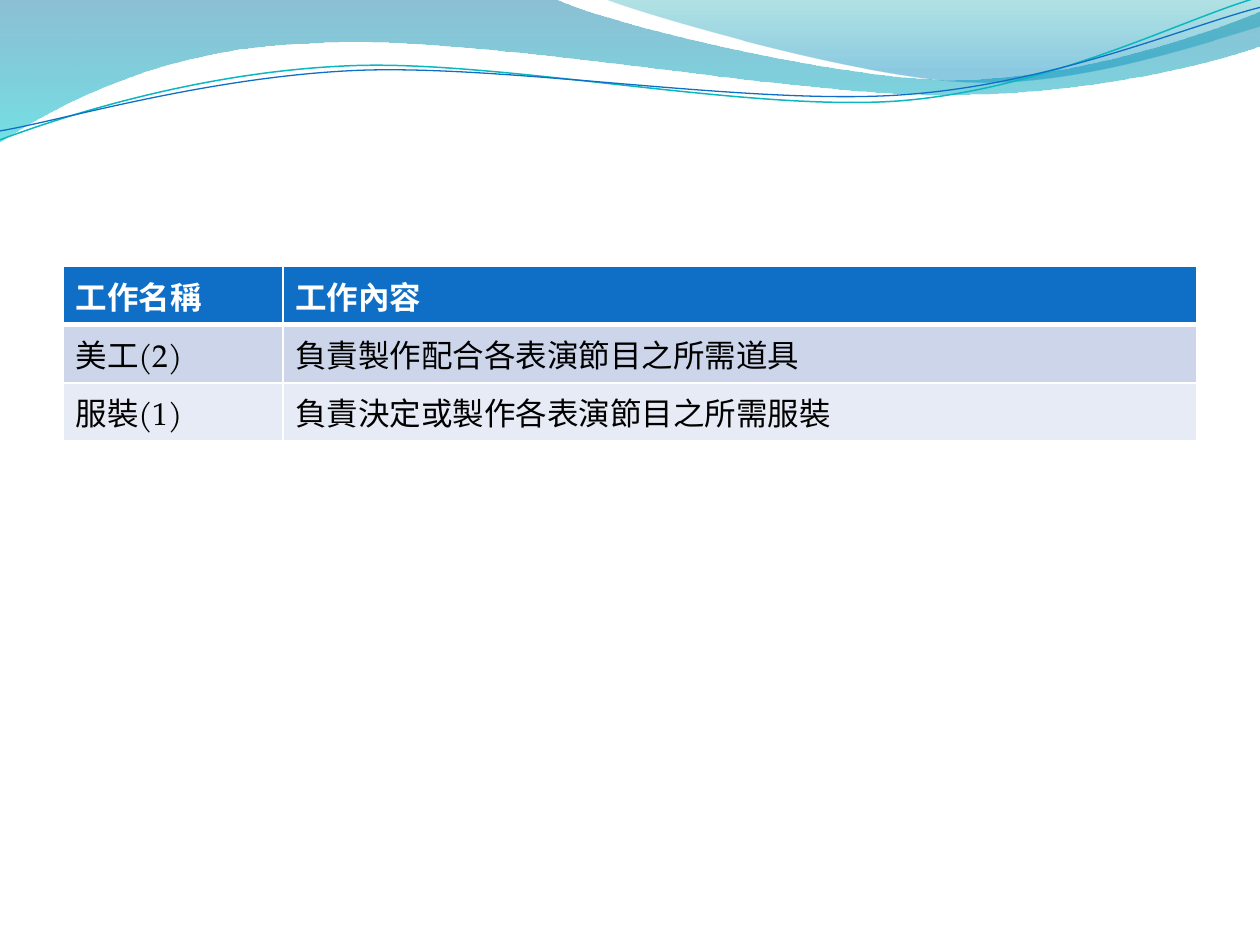
from lxml import etree
from pptx import Presentation
from pptx import util as u
from pptx.dml import color as dml
from pptx.oxml import ns

FONT = "TeX Gyre Pagella"
WHITE = "FFFFFF"
STRAND_ROTATION = 357.3

WAVES = [
    {"start": (0, 0),
     "segments": [
         [(11.18, -0.03)],
         [(12.09, 0.43), (16.87, 1.6), (19.25, 1.6)],
         [(21.67, 1.6), (24.33, 0.66), (25.4, 0.23)],
         [(25.43, 0.91)],
         [(24.97, 1.12), (22.1, 1.93), (18.95, 1.91)],
         [(15.8, 1.91), (9.7, 0.71), (6.53, 0.86)],
         [(3.28, 0.91), (1.17, 2.11), (-0.03, 2.87)]],
     "stops": [(0, "0074A1", 45), (1, "00C6CF", 55)]},
    {"start": (12.17, -0.03),
     "segments": [
         [(12.93, 0.28), (17.32, 1.57), (19.53, 1.65)],
         [(21.74, 1.75), (24.41, 0.81), (25.4, 0.53)],
         [(25.4, 0)]],
     "stops": [(0, "00A1A9", 30), (0.8, "008BBF", 45)]},
]
STRANDS = [
    {"start": (-0.05, 2.22),
     "segments": [
         [(1.19, 1.82), (4.02, 1.04), (7.05, 1.06)],
         [(10.05, 1.07), (15.02, 2.37), (18.08, 2.29)],
         [(21.13, 2.2), (23.87, 0.91), (25.41, 0.55)]],
     "line": ("0AB8BF", 0.85)},
    {"start": (-0.04, 2.04),
     "segments": [
         [(1.16, 1.9), (4.18, 1.15), (7.2, 1.16)],
         [(10.25, 1.18), (15.13, 2.25), (18.18, 2.17)],
         [(21.21, 2.1), (23.93, 1.06), (25.45, 0.75)]],
     "line": ("0F6FC6", 0.75)},
]
JOBS = [
    ("工作名稱", "工作內容"),
    ("美工(2)", "負責製作配合各表演節目之所需道具"),
    ("服裝(1)", "負責決定或製作各表演節目之所需服裝"),
]
ROW_FILLS = ["0F6FC6", "CCD5EA", "E7EBF5"]


def rgb(value):
    return dml.RGBColor.from_string(value)


def write_text(frame, content, size=18, color="000000", bold=False):
    run = frame.paragraphs[0].add_run()
    run.text = content
    run.font.name = FONT
    run.font.size = u.Pt(size)
    run.font.bold = bold
    run.font.color.rgb = rgb(color)


def bend_segments(shape, segments):
    steps = iter(list(shape.element.iter(ns.qn("a:lnTo"))))
    for segment in segments:
        first, *others = [next(steps) for _ in segment]
        if others:
            first.tag = ns.qn("a:cubicBezTo")
        for step in others:
            first.append(step[0])
            step.getparent().remove(step)


def add_outline(shapes, box, start, segments, closed):
    points = [(u.Cm(x), u.Cm(y)) for segment in segments for x, y in segment]
    builder = shapes.build_freeform(u.Cm(start[0]), u.Cm(start[1]))
    builder.add_line_segments(points, close=closed)
    shape = builder.convert_to_shape(u.Cm(box[0]), u.Cm(box[1]))
    bend_segments(shape, segments)
    shape.shadow.inherit = False
    return shape


def fill_gradient(shape, stops):
    shape.fill.gradient()
    shape.fill.gradient_angle = 270
    for stop, (position, color, _) in zip(shape.fill.gradient_stops, stops):
        stop.position = position
        stop.color.rgb = rgb(color)
    colors = list(shape.element.iter(ns.qn("a:srgbClr")))
    for element, (_, _, opacity) in zip(colors, stops):
        etree.SubElement(element, ns.qn("a:alpha"), val=str(opacity * 1000))


def add_wave_header(slide, box):
    for wave in WAVES:
        shape = add_outline(slide.shapes, box, wave["start"], wave["segments"], True)
        fill_gradient(shape, wave["stops"])
        shape.line.fill.background()
    group = slide.shapes.add_group_shape()
    for strand in STRANDS:
        shape = add_outline(group.shapes, box, strand["start"], strand["segments"], False)
        color, width = strand["line"]
        shape.fill.background()
        shape.line.color.rgb = rgb(color)
        shape.line.width = u.Pt(width)
        shape.rotation = STRAND_ROTATION


def set_borders(cell, widths):
    properties = cell._tc.get_or_add_tcPr()
    for index, (side, width) in enumerate(widths.items()):
        border = etree.Element(ns.qn(f"a:ln{side}"), w=str(u.Pt(width)))
        fill = etree.SubElement(border, ns.qn("a:solidFill"))
        etree.SubElement(fill, ns.qn("a:srgbClr"), val=WHITE)
        properties.insert(index, border)


def add_job_table(slide, box):
    left, top, width, height = box
    table = slide.shapes.add_table(len(JOBS), 2, u.Cm(left), u.Cm(top),
                                   u.Cm(width), u.Cm(height)).table
    name_width = 4.43
    table.columns[0].width = u.Cm(name_width)
    table.columns[1].width = u.Cm(width - name_width)
    for row, (job, fill) in enumerate(zip(JOBS, ROW_FILLS)):
        header = row == 0
        table.rows[row].height = u.Cm(height / len(JOBS))
        for column, content in enumerate(job):
            cell = table.cell(row, column)
            cell.fill.solid()
            cell.fill.fore_color.rgb = rgb(fill)
            set_borders(cell, {"L": 1, "R": 1, "T": 3 if row == 1 else 1,
                               "B": 3 if header else 1})
            write_text(cell.text_frame, content, bold=header,
                       color=WHITE if header else "000000")


def main():
    presentation = Presentation()
    presentation.slide_width = u.Cm(25.4)
    presentation.slide_height = u.Cm(19.05)
    slide = presentation.slides.add_slide(presentation.slide_layouts[6])
    add_wave_header(slide, (0, 0))
    add_job_table(slide, (1.27, 5.37, 22.86, 3.09))
    presentation.save("out.pptx")


if __name__ == "__main__":
    main()
